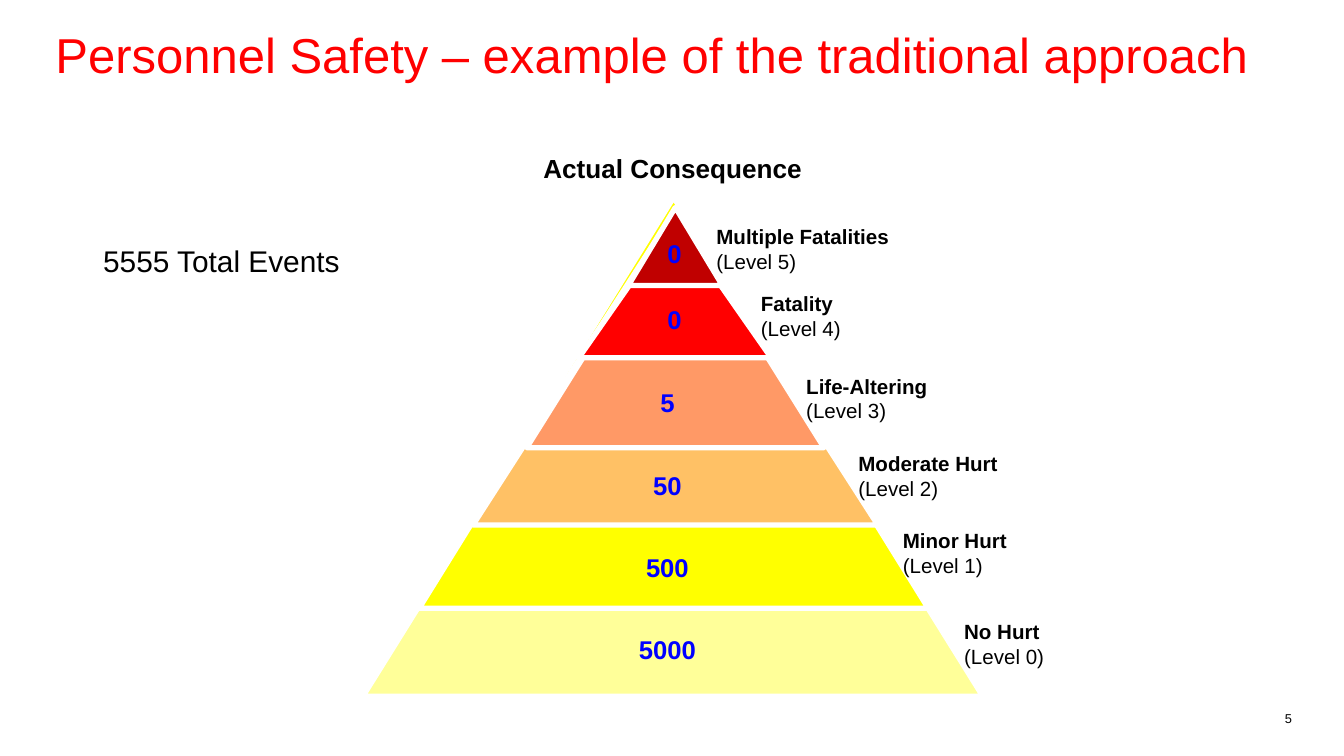
from pptx import Presentation
from pptx.dml.color import RGBColor
from pptx.enum import shapes, text
from pptx.util import Inches, Pt

BLACK = RGBColor(0, 0, 0)
WHITE = RGBColor(255, 255, 255)
RED = RGBColor(255, 0, 0)
BLUE = RGBColor(0, 0, 255)
CREAM = RGBColor(255, 255, 153)
YELLOW = RGBColor(255, 255, 0)
AMBER = RGBColor(255, 193, 101)
SALMON = RGBColor(255, 153, 102)
DARK = RGBColor(192, 0, 0)
LEFT, MID, RIGHT = text.PP_ALIGN.LEFT, text.PP_ALIGN.CENTER, text.PP_ALIGN.RIGHT

deck = Presentation()
deck.slide_width, deck.slide_height = Inches(16), Inches(9)
slide = deck.slides.add_slide(deck.slide_layouts[5])


def write(para, words, size, color=BLACK, bold=False, align=LEFT):
    para.alignment = align
    run = para.add_run()
    run.text = words
    font = run.font
    font.name, font.size, font.bold = "Arial", Pt(size), bold
    font.color.rgb = color


def add_box(x, y, w, h, lines, size, align=LEFT, pad=0.1):
    """Add a text box; lines holds (words, bold) pairs."""
    frame = slide.shapes.add_textbox(*map(Inches, (x, y, w, h))).text_frame
    frame.word_wrap = True
    frame.auto_size = text.MSO_AUTO_SIZE.SHAPE_TO_FIT_TEXT
    frame.margin_left = frame.margin_right = Inches(pad)
    frame.margin_top = frame.margin_bottom = Inches(pad / 2)
    for i, (words, bold) in enumerate(lines):
        para = frame.add_paragraph() if i else frame.paragraphs[0]
        write(para, words, size, bold=bold, align=align)


# Title
title = slide.shapes.title
title.left, title.top = Inches(0.66), Inches(0.29)
title.width, title.height = Inches(14.75), Inches(1)
frame = title.text_frame
frame.auto_size = text.MSO_AUTO_SIZE.NONE
frame.vertical_anchor = text.MSO_ANCHOR.TOP
frame.margin_left = frame.margin_right = frame.margin_top = frame.margin_bottom = 0
write(frame.paragraphs[0],
      "Personnel Safety – example of the traditional approach", 42, RED)

# Pyramid: stacked triangles, widest at the back
tiers = [
    (4.32, 2.36, 7.38, 5.93, CREAM),
    (4.99, 2.35, 6.06, 4.89, YELLOW),
    (5.63, 2.5, 4.82, 3.75, AMBER),
    (6.27, 2.5, 3.54, 2.83, SALMON),
    (6.89, 2.62, 2.29, 1.64, RED),
    (7.48, 2.47, 1.12, 0.93, DARK),
]
for *place, color in tiers:
    tier = slide.shapes.add_shape(
        shapes.MSO_SHAPE.ISOSCELES_TRIANGLE, *map(Inches, place))
    tier.shadow.inherit = False
    tier.fill.solid()
    tier.fill.fore_color.rgb = color
    tier.line.color.rgb = WHITE
    tier.line.width = Pt(4.5)

# Event counts
counts = [("0", 0.79), ("0", 0.99), ("5", 0.98),
          ("50", 0.98), ("500", 0.98), ("5000", 0.86)]
table = slide.shapes.add_table(
    len(counts), 1, Inches(7.33), Inches(2.81), Inches(1.23), Inches(5.58)).table
table.first_row = table.horz_banding = False
# Style without grid lines
table._tbl.tblPr[0].text = "{2D5ABB26-0587-4C30-8999-92F81FD0307C}"
for i, (count, high) in enumerate(counts):
    table.rows[i].height = Inches(high)
    cell = table.cell(i, 0)
    cell.fill.background()
    cell.margin_left = Inches(0.26 if count == "0" else 0.09)
    cell.margin_right = Inches(0.09)
    cell.margin_top = cell.margin_bottom = Inches(0.05)
    write(cell.text_frame.paragraphs[0], count, 22, BLUE, True, MID)

# Level labels, from the top down
labels = [
    ("Multiple Fatalities", 8.43, 2.62, 3.03, 0.99),
    ("Fatality", 8.96, 3.42, 1.97, 0.91),
    ("Life-Altering", 9.5, 4.4, 2, 0.69),
    ("Moderate Hurt", 10.12, 5.32, 3.21, 0.69),
    ("Minor Hurt", 10.65, 6.24, 2.68, 0.69),
    ("No Hurt", 11.38, 7.32, 2.03, 0.69),
]
for i, (name, *place) in enumerate(labels):
    add_box(*place, [(name, True), (f"(Level {5 - i})", False)], 17.6)

# Total, heading and page number
add_box(1.13, 2.84, 4.14, 0.53, [("5555 Total Events", False)], 25.6)
add_box(5.09, 1.77, 5.84, 0.47, [("Actual Consequence", True)], 22.4, MID, 0.09)
add_box(14.87, 8.46, 0.51, 0.23, [("5", False)], 11, RIGHT, 0)

deck.save("out.pptx")
